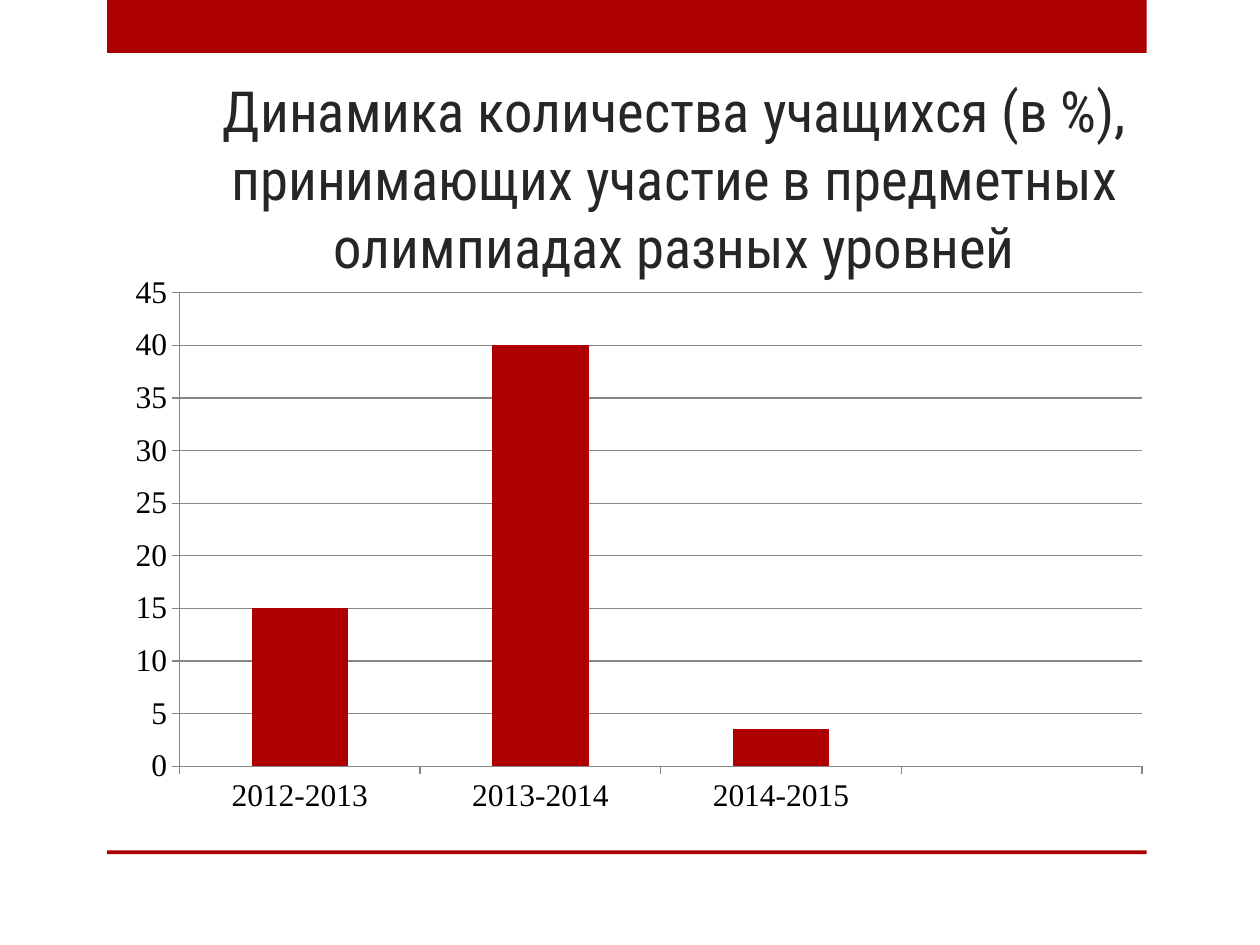
import pptx
import pptx.chart.data
import pptx.dml.color
import pptx.enum.chart
import pptx.enum.shapes
import pptx.enum.text
import pptx.util

Inches = pptx.util.Inches
Pt = pptx.util.Pt
RGBColor = pptx.dml.color.RGBColor

RED = RGBColor(0xAD, 0x01, 0x01)
DARK = RGBColor(0x26, 0x26, 0x26)
BLACK = RGBColor(0, 0, 0)
GRAY = RGBColor(0x86, 0x86, 0x86)


def apply_format(target, values):
    for name, value in values.items():
        setattr(target, name, value)


class SlideBuilder:
    title_font = {"name": "Roboto Condensed", "size": Pt(32.4)}
    chart_font = {"name": "Times New Roman", "size": Pt(18)}

    def __init__(self, slide):
        self.slide = slide

    def bar(self, left, top, width, height):
        shape = self.slide.shapes.add_shape(
            pptx.enum.shapes.MSO_SHAPE.RECTANGLE,
            Inches(left), Inches(top), Inches(width), Inches(height))
        shape.shadow.inherit = False
        shape.fill.solid()
        shape.fill.fore_color.rgb = RED
        shape.line.fill.background()

    def title(self, text, left, top, width, height):
        box = self.slide.shapes.add_textbox(
            Inches(left), Inches(top), Inches(width), Inches(height))
        apply_format(box.text_frame, {
            "word_wrap": True,
            "vertical_anchor": pptx.enum.text.MSO_ANCHOR.BOTTOM})
        para = box.text_frame.paragraphs[0]
        para.alignment = pptx.enum.text.PP_ALIGN.CENTER
        span = para.add_run()
        span.text = text
        apply_format(span.font, self.title_font)
        span.font.color.rgb = DARK

    def column_chart(self, categories, values, left, top, width, height):
        data = pptx.chart.data.CategoryChartData()
        data.categories = categories
        data.add_series("Series 1", values)
        chart = self.slide.shapes.add_chart(
            pptx.enum.chart.XL_CHART_TYPE.COLUMN_CLUSTERED,
            Inches(left), Inches(top), Inches(width), Inches(height), data).chart
        apply_format(chart, {"has_legend": False, "has_title": False})
        apply_format(chart.font, self.chart_font)
        chart.font.color.rgb = BLACK

        plot = chart.plots[0]
        apply_format(plot, {"gap_width": 150, "vary_by_categories": False})
        series = plot.series[0]
        series.format.fill.solid()
        series.format.fill.fore_color.rgb = RED

        value_axis, category_axis = chart.value_axis, chart.category_axis
        apply_format(value_axis, {
            "minimum_scale": 0, "maximum_scale": 45, "major_unit": 5,
            "has_major_gridlines": True})
        for axis in (value_axis, category_axis):
            axis.major_tick_mark = pptx.enum.chart.XL_TICK_MARK.OUTSIDE
        for part in (value_axis, category_axis, value_axis.major_gridlines):
            part.format.line.color.rgb = GRAY
            part.format.line.width = Pt(0.75)


def main():
    deck = pptx.Presentation()
    apply_format(deck, {"slide_width": Inches(10), "slide_height": Inches(7.5)})
    builder = SlideBuilder(deck.slides.add_slide(deck.slide_layouts[6]))
    for top, height in ((0, 0.42), (6.75, 0.03)):
        builder.bar(0.85, top, 8.25, height)
    builder.title(
        "Динамика количества учащихся (в %), принимающих участие "
        "в предметных олимпиадах разных уровней", 1.3, 0.52, 8.11, 1.75)
    builder.column_chart(
        ["2012-2013", "2013-2014", "2014-2015", ""], [15, 40, 3.5, None],
        0.91, 2.1, 8.32, 4.44)
    deck.save("out.pptx")


if __name__ == "__main__":
    main()
